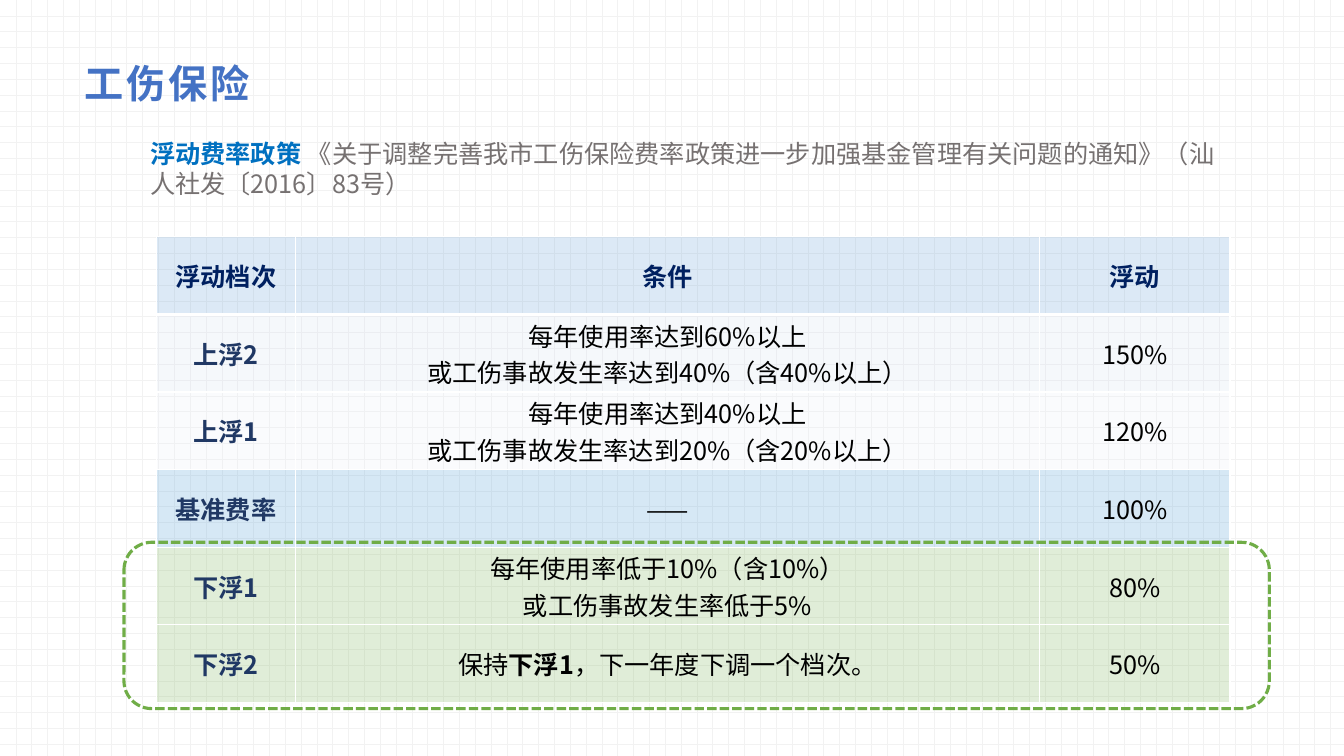
from lxml import etree
from pptx import Presentation
from pptx.dml.color import RGBColor
from pptx.enum.dml import MSO_LINE, MSO_PATTERN
from pptx.enum.shapes import MSO_SHAPE
from pptx.enum.text import MSO_ANCHOR, PP_ALIGN
from pptx.oxml import parse_xml
from pptx.oxml.ns import nsdecls, qn
from pptx.util import Inches, Pt

CJK = "Noto Sans CJK SC"
DOT_GRID = MSO_PATTERN.DOTTED_GRID
DASH = MSO_LINE.SQUARE_DOT
ROUNDED = MSO_SHAPE.ROUNDED_RECTANGLE
MIDDLE = MSO_ANCHOR.MIDDLE
LEFT, CENTER = PP_ALIGN.LEFT, PP_ALIGN.CENTER


def rgb(value):
    return RGBColor.from_string(value)


def add_run(p, text, color, bold=False, size=18, font=CJK):
    r = p.add_run()
    r.text = text
    r.font.size = Pt(size)
    r.font.bold = bold
    r.font.name = font
    r.font.color.rgb = rgb(color)
    etree.SubElement(r.font._element, qn("a:ea"), typeface=CJK)
    return r


prs = Presentation()
prs.slide_width = Inches(13.33)
prs.slide_height = Inches(7.5)
s = prs.slides.add_slide(prs.slide_layouts[5])
bg = s.background.fill
bg.patterned()
bg.pattern = DOT_GRID
bg.fore_color.rgb = rgb("F2F2F2")
bg.back_color.rgb = rgb("FFFFFF")

title = s.shapes.title
title.left, title.top = Inches(0.73), Inches(0.47)
title.width, title.height = Inches(11.87), Inches(0.71)
tf = title.text_frame
tf.vertical_anchor = MIDDLE
tf.margin_left, tf.margin_right = Inches(0.11), Inches(0.08)
tf.margin_top = tf.margin_bottom = Inches(0.04)
p = tf.paragraphs[0]
p.alignment = LEFT
r = add_run(p, "工伤保险", "4472C4", True, 28, "Arial")
r.font._element.set("spc", "200")

policy = s.shapes.add_textbox(Inches(1.39), Inches(1.32), Inches(10.99), Inches(0.71))
tf = policy.text_frame
tf.word_wrap = True
p = tf.paragraphs[0]
p.line_spacing = Pt(21.5)
add_run(p, "浮动费率政策", "0070C0", True)
add_run(p, " 《关于调整完善我市工伤保险费率政策进一步加强基金管理有关问题的通知》（汕人社发〔2016〕83号）", "767171")

rows = [
    ("5B9BD5", "浮动档次", ["条件"], "浮动"),
    ("D2DEEF", "上浮2", ["每年使用率达到60%以上", "或工伤事故发生率达到40%（含40%以上）"], "150%"),
    ("EAEFF7", "上浮1", ["每年使用率达到40%以上", "或工伤事故发生率达到20%（含20%以上）"], "120%"),
    ("4095D2", "基准费率", ["——"], "100%"),
    ("70AD47", "下浮1", ["每年使用率低于10%（含10%）", "或工伤事故发生率低于5%"], "80%"),
    ("70AD47", "下浮2", ["保持*下浮1*，下一年度下调一个档次。"], "50%"),
]
table = s.shapes.add_table(len(rows), 3, Inches(1.55), Inches(2.35), Inches(10.65), Inches(4.64)).table
table.first_row = table.horz_banding = False
for column, width in zip(table.columns, (1.38, 7.38, 1.89)):
    column.width = Inches(width)

for i, (fill, level, conditions, rate) in enumerate(rows):
    table.rows[i].height = Inches(0.77)
    for j, lines in enumerate(([level], conditions, [rate])):
        cell = table.cell(i, j)
        cell.vertical_anchor = MIDDLE
        cell.margin_top = cell.margin_bottom = Inches(0.02)
        cell.fill.solid()
        cell.fill.fore_color.rgb = rgb(fill)
        tcPr = cell._tc.get_or_add_tcPr()
        etree.SubElement(tcPr.find(".//" + qn("a:srgbClr")), qn("a:alpha"), val="21000")
        borders = {"lnL": 1, "lnR": 1, "lnT": 3 if i == 1 else 1, "lnB": 3 if i == 0 else 1}
        for k, (side, width) in enumerate(borders.items()):
            tcPr.insert(k, parse_xml(
                f'<a:{side} {nsdecls("a")} w="{Pt(width)}"><a:solidFill>'
                f'<a:srgbClr val="FFFFFF"/></a:solidFill></a:{side}>'))
        color = "002060" if i == 0 else "203864" if j == 0 else "000000"
        tf = cell.text_frame
        for n, line in enumerate(lines):
            p = tf.add_paragraph() if n else tf.paragraphs[0]
            p.alignment = CENTER
            for m, part in enumerate(line.split("*")):
                add_run(p, part, color, i == 0 or j == 0 or m == 1)

frame = s.shapes.add_shape(ROUNDED, Inches(1.23), Inches(5.38), Inches(11.36), Inches(1.65))
frame.shadow.inherit = False
frame.fill.background()
frame.line.color.rgb = rgb("70AD47")
frame.line.width = Pt(2.25)
frame.line.dash_style = DASH

prs.save("out.pptx")
